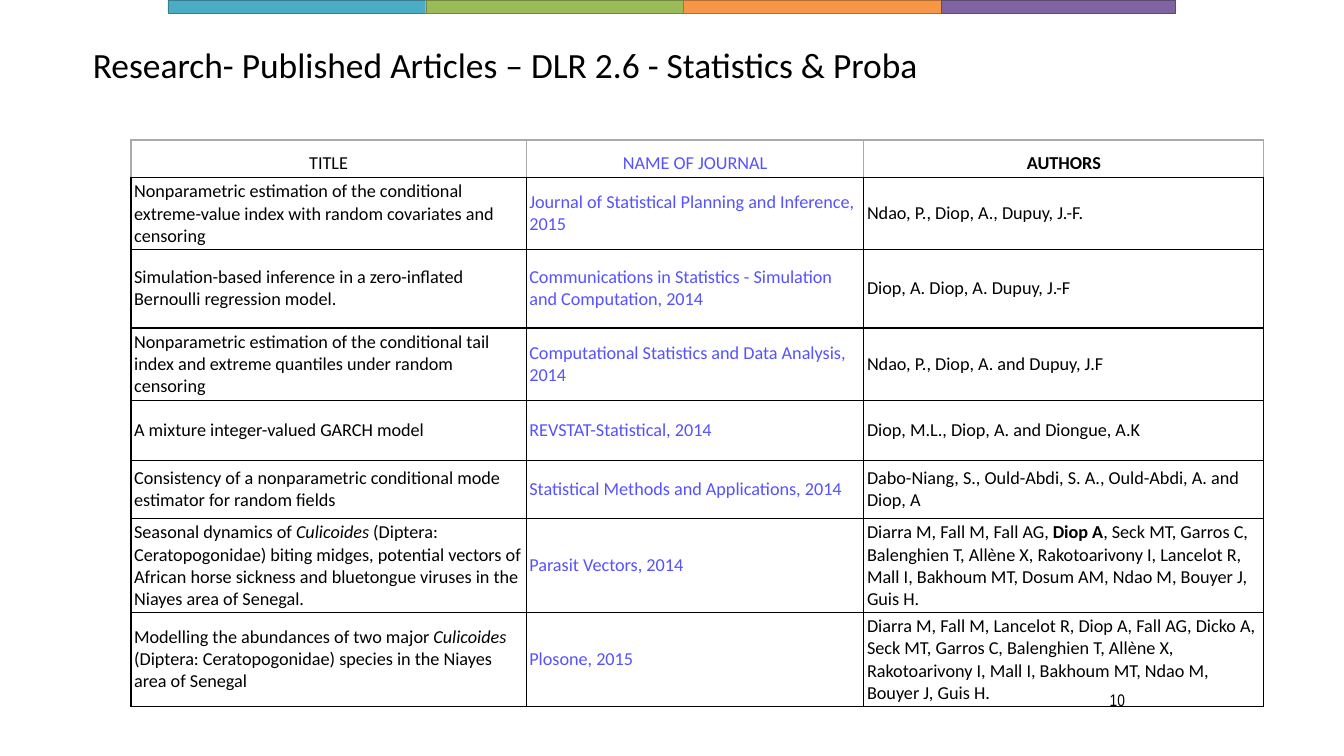
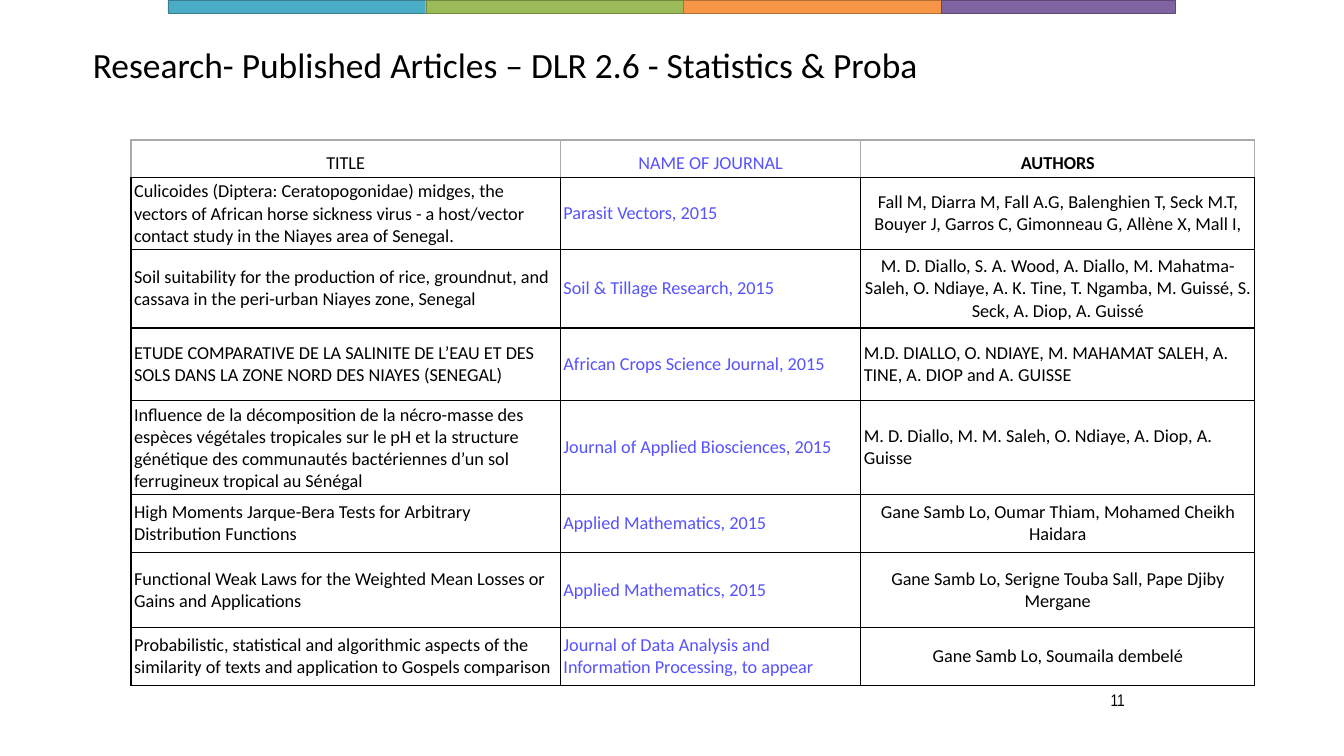
"""Build the two slides that list published articles in statistics and probability."""
import pptx
import pptx.dml.color
import pptx.enum.shapes
import pptx.enum.text
import pptx.oxml
import pptx.oxml.ns
import pptx.util

Cm, Pt = pptx.util.Cm, pptx.util.Pt
Align, Anchor = pptx.enum.text.PP_ALIGN, pptx.enum.text.MSO_ANCHOR

HEADING = "Research- Published Articles – DLR 2.6 - Statistics & Proba"
BANDS = [
    ("4BACC6", "377E90", 6.5),
    ("9BBB59", "718841", 6.5),
    ("F79646", "B46D33", 6.5),
    ("8064A2", "5D4976", 5.9),
]


def rgb(code):
    """Turn a hex string into a colour."""
    return pptx.dml.color.RGBColor.from_string(code)


def write(frame, text, size=13, font="Calibri", color="000000", bold=False,
          align=Align.LEFT, anchor=Anchor.MIDDLE, spacing=None):
    """Fill a text frame with a string or a list of (string, emphasis) runs."""
    frame.word_wrap = True
    frame.vertical_anchor = anchor
    paragraph = frame.paragraphs[0]
    paragraph.alignment = align
    paragraph.line_spacing = spacing
    for words, emphasis in [(text, "")] if isinstance(text, str) else text:
        run = paragraph.add_run()
        run.text = words
        run.font.size = Pt(size)
        run.font.name = font
        run.font.color.rgb = rgb(color)
        run.font.bold = bold or emphasis == "bold"
        run.font.italic = emphasis == "italic"


def clear_margins(frame):
    """Remove the inner margins of a text frame."""
    frame.margin_left = frame.margin_right = frame.margin_top = frame.margin_bottom = 0


class Deck:
    """Hold the shared style and the current slide."""

    black, grey, violet = "000000", "AAAAAA", "5652FF"
    column_names = ("TITLE", "NAME OF JOURNAL", "AUTHORS")
    column_colors = (black, violet, black)
    cell_margin = Cm(0.08)

    def __init__(self):
        """Start an empty widescreen presentation."""
        self.presentation = pptx.Presentation()
        self.presentation.slide_width = Cm(33.87)
        self.presentation.slide_height = Cm(19.05)
        self.slide = None

    def add_slide(self, heading, number):
        """Add a slide with bands, number and title."""
        self.slide = self.presentation.slides.add_slide(self.presentation.slide_layouts[5])
        self.add_bands()
        self.add_number(number)
        self.set_title(heading)

    def add_bands(self):
        """Draw the row of coloured bands along the top edge."""
        left = 4.23
        for fill, line, width in BANDS:
            band = self.slide.shapes.add_shape(
                pptx.enum.shapes.MSO_SHAPE.RECTANGLE, Cm(left), 0, Cm(width), Cm(0.33))
            band.shadow.inherit = False
            band.fill.solid()
            band.fill.fore_color.rgb = rgb(fill)
            band.line.color.rgb = rgb(line)
            band.line.width = Pt(0.25)
            left += width

    def add_number(self, number):
        """Write the slide number."""
        frame = self.slide.shapes.add_textbox(
            Cm(22.43), Cm(17.27), Cm(5.92), Cm(0.74)).text_frame
        clear_margins(frame)
        write(frame, str(number), size=12, font="Arial Narrow", align=Align.RIGHT)

    def set_title(self, heading):
        """Place and format the title placeholder."""
        title = self.slide.shapes.title
        title.left, title.top, title.width, title.height = Cm(2.34), Cm(1.02), Cm(24.56), Cm(1.35)
        clear_margins(title.text_frame)
        title.text_frame.auto_size = pptx.enum.text.MSO_AUTO_SIZE.NONE
        write(title.text_frame, heading, size=25.3, spacing=0.9)

    def add_articles(self, articles, widths, heights, centred=()):
        """Add the article table; centred lists the rows with centred authors."""
        table = self.slide.shapes.add_table(
            len(articles) + 1, len(widths), Cm(3.3), Cm(3.53),
            Cm(sum(widths)), Cm(sum(heights))).table
        table.first_row = table.horz_banding = False
        for column, width in zip(table.columns, widths):
            column.width = Cm(width)
        for row, height in zip(table.rows, heights):
            row.height = Cm(height)
        for r, entries in enumerate([self.column_names] + articles):
            for c, entry in enumerate(entries):
                header = r == 0
                middle = header or (c == 2 and r in centred)
                self.fill_cell(
                    table.cell(r, c), entry, self.grey if header else self.black,
                    color=self.column_colors[c], bold=header and c == 2,
                    align=Align.CENTER if middle else Align.LEFT,
                    anchor=Anchor.BOTTOM if header else Anchor.MIDDLE)

    def fill_cell(self, cell, entry, edge, anchor, **style):
        """Write one cell with its borders, margins and empty fill."""
        properties = cell._tc.get_or_add_tcPr()
        for side, color in (("L", edge), ("R", edge), ("T", edge), ("B", self.black)):
            properties.append(pptx.oxml.parse_xml(
                f'<a:ln{side} {pptx.oxml.ns.nsdecls("a")} w="12700"><a:solidFill>'
                f'<a:srgbClr val="{color}"/></a:solidFill></a:ln{side}>'))
        cell.fill.background()
        cell.margin_left = cell.margin_right = self.cell_margin
        cell.margin_top = cell.margin_bottom = self.cell_margin
        write(cell.text_frame, entry, **style)
        cell.vertical_anchor = anchor


def main():
    """Build and save the presentation."""
    deck = Deck()

    deck.add_slide(HEADING, 10)
    deck.add_articles([
        ("Nonparametric estimation of the conditional extreme-value index with random "
         "covariates and censoring",
         "Journal of Statistical Planning and Inference, 2015",
         "Ndao, P., Diop, A., Dupuy, J.-F."),
        ("Simulation-based inference in a zero-inflated Bernoulli regression model.",
         "Communications in Statistics - Simulation and Computation, 2014",
         "Diop, A. Diop, A. Dupuy, J.-F"),
        ("Nonparametric estimation of the conditional tail index and extreme quantiles "
         "under random censoring",
         "Computational Statistics and Data Analysis, 2014",
         "Ndao, P., Diop, A. and Dupuy, J.F"),
        ("A mixture integer-valued GARCH model",
         "REVSTAT-Statistical, 2014",
         "Diop, M.L., Diop, A. and Diongue, A.K"),
        ("Consistency of a nonparametric conditional mode estimator for random fields",
         "Statistical Methods and Applications, 2014",
         "Dabo-Niang, S., Ould-Abdi, S. A., Ould-Abdi, A. and Diop, A"),
        ([("Seasonal dynamics of ", ""), ("Culicoides", "italic"),
          (" (Diptera: Ceratopogonidae) biting midges, potential vectors of African horse "
           "sickness and bluetongue viruses in the Niayes area of Senegal.", "")],
         "Parasit Vectors, 2014",
         [("Diarra M, Fall M, Fall AG, ", ""), ("Diop A", "bold"),
          (", Seck MT, Garros C, Balenghien T, Allène X, Rakotoarivony I, Lancelot R, "
           "Mall I, Bakhoum MT, Dosum AM, Ndao M, Bouyer J, Guis H.", "")]),
        ([("Modelling the abundances of two major ", ""), ("Culicoides ", "italic"),
          ("(Diptera: Ceratopogonidae) species in the Niayes area of Senegal", "")],
         "Plosone, 2015",
         "Diarra M, Fall M, Lancelot R, Diop A, Fall AG, Dicko A, Seck MT, Garros C, "
         "Balenghien T, Allène X, Rakotoarivony I, Mall I, Bakhoum MT, Ndao M, "
         "Bouyer J, Guis H."),
    ], widths=(9.96, 8.51, 10.08), heights=(0.94, 1.47, 1.98, 1.83, 1.5, 1.47, 1.88, 1.47))

    deck.add_slide(HEADING, 11)
    deck.add_articles([
        ("Culicoides (Diptera: Ceratopogonidae) midges, the vectors of African horse "
         "sickness virus - a host/vector contact study in the Niayes area of Senegal.",
         "Parasit Vectors, 2015",
         "Fall M, Diarra M, Fall A.G, Balenghien T, Seck M.T, Bouyer J, Garros C, "
         "Gimonneau G, Allène X, Mall I,"),
        ("Soil suitability for the production of rice, groundnut, and cassava in the "
         "peri-urban Niayes zone, Senegal",
         "Soil & Tillage Research, 2015",
         "M. D. Diallo, S. A. Wood, A. Diallo, M. Mahatma-Saleh, O. Ndiaye, A. K. Tine, "
         "T. Ngamba, M. Guissé, S. Seck, A. Diop, A. Guissé"),
        ("ETUDE COMPARATIVE DE LA SALINITE DE L’EAU ET DES SOLS DANS LA ZONE NORD DES "
         "NIAYES (SENEGAL)",
         "African Crops Science Journal, 2015",
         "M.D. DIALLO, O. NDIAYE, M. MAHAMAT SALEH, A. TINE, A. DIOP and A. GUISSE"),
        ("Influence de la décomposition de la nécro-masse des espèces végétales tropicales "
         "sur le pH et la structure génétique des communautés bactériennes d’un sol "
         "ferrugineux tropical au Sénégal",
         "Journal of Applied Biosciences, 2015",
         "M. D. Diallo, M. M. Saleh, O. Ndiaye, A. Diop, A. Guisse"),
        ("High Moments Jarque-Bera Tests for Arbitrary Distribution Functions",
         "Applied Mathematics, 2015",
         "Gane Samb Lo, Oumar Thiam, Mohamed Cheikh Haidara"),
        ("Functional Weak Laws for the Weighted Mean Losses or Gains and Applications",
         "Applied Mathematics, 2015",
         "Gane Samb Lo, Serigne Touba Sall, Pape Djiby Mergane"),
        ("Probabilistic, statistical and algorithmic aspects of the similarity of texts "
         "and application to Gospels comparison",
         "Journal of Data Analysis and Information Processing, to appear",
         "Gane Samb Lo, Soumaila dembelé"),
    ], widths=(10.82, 7.57, 9.93), heights=(0.94, 1.47, 1.98, 1.83, 1.88, 1.47, 1.88, 1.47),
        centred=(1, 2, 5, 6, 7))

    deck.presentation.save("out.pptx")


if __name__ == "__main__":
    main()
